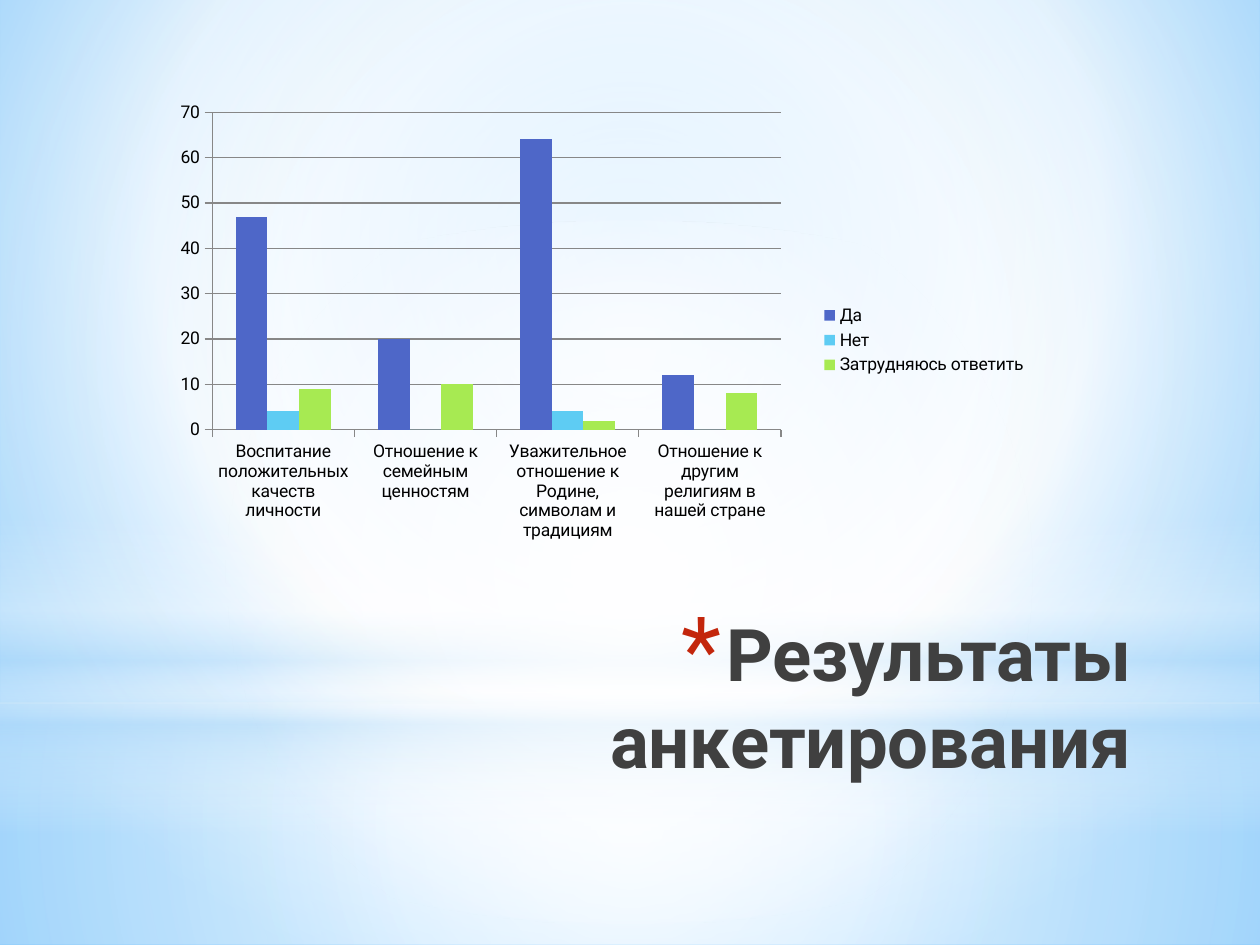
from lxml import etree
from pptx import Presentation
from pptx import util as u
from pptx.chart.data import CategoryChartData
from pptx.dml.color import RGBColor
from pptx.enum import chart as ch, shapes, text
from pptx.oxml import parse_xml
from pptx.oxml.ns import nsdecls, qn

W, H = 10, 7.5
FONT = "Roboto"
TITLE = "Результаты анкетирования"
CATS = ["Воспитание положительных качеств личности",
        "Отношение к семейным ценностям",
        "Уважительное отношение к Родине, символам и традициям",
        "Отношение к другим религиям в нашей стране"]
SERIES = [("Да", (47, 20, 64, 12), "4E67C8"),
          ("Нет", (4, 0, 4, 0), "5ECCF3"),
          ("Затрудняюсь ответить", (9, 10, 2, 8), "A7EA52")]
PLOT = {"x": 0.062, "y": 0.024, "w": 0.645, "h": 0.663}

WHITE, SKY = "FFFFFF", "B4DCFA"
CENTRE = (50, 50, 50, 50)
BACKDROP = [(0, "9ED5FF", 100), (60, WHITE, 100), (100, "5BB9FF", 100)]
RECT, OVAL = shapes.MSO_SHAPE.RECTANGLE, shapes.MSO_SHAPE.OVAL
LAYERS = [
    (RECT, 5.58, 1.92, [(0, WHITE, 91), (37, WHITE, 76), (100, SKY, 79)], CENTRE),
    (RECT, 0, 5.58, [(0, WHITE, 89), (48, WHITE, 62), (100, SKY, 79)], CENTRE),
    (RECT, 4.12, 2.5, [(0, WHITE, 0), (29, WHITE, 30), (45, SKY, 40),
                       (55, WHITE, 26), (65, SKY, 60), (100, WHITE, 0)], None),
    (OVAL, 1.75, 5.58, [(0, WHITE, 100), (56, WHITE, 0)], CENTRE),
]


def rgb(value):
    return RGBColor.from_string(value)


def box(*lengths):
    return [u.Inches(n) for n in lengths]


def gradient(parent, stops, focus):
    gs = "".join(f'<a:gs pos="{pos * 1000}"><a:srgbClr val="{color}">'
                 f'<a:alpha val="{alpha * 1000}"/></a:srgbClr></a:gs>'
                 for pos, color, alpha in stops)
    if focus:
        sides = " ".join(f'{k}="{v * 1000}"' for k, v in zip("ltrb", focus))
        way = f'<a:path path="circle"><a:fillToRect {sides}/></a:path>'
    else:
        way = '<a:lin ang="5400000" scaled="0"/>'
    solid = parent.find(qn("a:solidFill"))
    parent.replace(solid, parse_xml(
        f'<a:gradFill {nsdecls("a")} rotWithShape="1">'
        f'<a:gsLst>{gs}</a:gsLst>{way}</a:gradFill>'))


def add_layers(s):
    s.background.fill.solid()
    gradient(s.background._cSld.bg.bgPr, BACKDROP, (20, 10, 20, 60))
    for kind, top, height, stops, focus in LAYERS:
        sp = s.shapes.add_shape(kind, *box(0, top, W, height))
        sp.shadow.inherit = False
        sp.line.fill.background()
        sp.fill.solid()
        gradient(sp._element.spPr, stops, focus)


def add_title(s):
    sp = s.shapes.title
    s.shapes._spTree.append(sp._element)
    sp.left, sp.top, sp.width, sp.height = box(1.96, 4.78, 7.12, 1.25)
    tf = sp.text_frame
    tf.word_wrap = True
    tf.auto_size = text.MSO_AUTO_SIZE.NONE
    tf.vertical_anchor = text.MSO_ANCHOR.TOP
    p = tf.paragraphs[0]
    p.alignment = text.PP_ALIGN.RIGHT
    pPr = p._p.get_or_add_pPr()
    pPr.set("marL", str(u.Inches(0.35)))
    pPr.set("indent", str(u.Inches(-0.35)))
    color = etree.SubElement(pPr, qn("a:buClr"))
    etree.SubElement(color, qn("a:srgbClr"), val="C3260C")
    etree.SubElement(pPr, qn("a:buSzPct"), val="128000")
    etree.SubElement(pPr, qn("a:buFont"), typeface=FONT)
    etree.SubElement(pPr, qn("a:buChar"), char="*")
    r = p.add_run()
    r.text = TITLE
    r.font.name, r.font.size, r.font.bold = FONT, u.Pt(41.4), True
    r.font.color.rgb = rgb("404040")


def add_results(s):
    data = CategoryChartData()
    data.categories = CATS
    for name, values, _ in SERIES:
        data.add_series(name, values)
    chart = s.shapes.add_chart(ch.XL_CHART_TYPE.COLUMN_CLUSTERED,
                               *box(1.25, 0.8, 7, 3.8), data).chart
    chart.has_title = False
    chart.font.name, chart.font.size = FONT, u.Pt(10)
    chart.font.color.rgb = rgb("000000")
    chart.has_legend = True
    chart.legend.position = ch.XL_LEGEND_POSITION.RIGHT
    chart.legend.include_in_layout = False
    plot = chart.plots[0]
    plot.gap_width, plot.overlap, plot.vary_by_categories = 150, 0, False
    for ser, (_, _, color) in zip(plot.series, SERIES):
        ser.format.fill.solid()
        ser.format.fill.fore_color.rgb = rgb(color)
    val = chart.value_axis
    val.minimum_scale, val.maximum_scale, val.major_unit = 0, 70, 10
    val.has_major_gridlines = True
    for part in (val, chart.category_axis, val.major_gridlines):
        part.format.line.color.rgb = rgb("878787")
        part.format.line.width = u.Pt(0.75)
    for axis in (val, chart.category_axis):
        axis.major_tick_mark = ch.XL_TICK_MARK.OUTSIDE
    area = chart._chartSpace.chart.plotArea
    for old in area.findall(qn("c:layout")):
        area.remove(old)
    sizes = "".join(f'<c:{k} val="{v}"/>' for k, v in PLOT.items())
    area.insert(0, parse_xml(
        f'<c:layout {nsdecls("c")}><c:manualLayout><c:layoutTarget val="inner"/>'
        f'<c:xMode val="edge"/><c:yMode val="edge"/>{sizes}'
        '</c:manualLayout></c:layout>'))


def main():
    prs = Presentation()
    prs.slide_width, prs.slide_height = box(W, H)
    s = prs.slides.add_slide(prs.slide_layouts[5])
    add_layers(s)
    add_title(s)
    add_results(s)
    prs.save("out.pptx")


if __name__ == "__main__":
    main()
